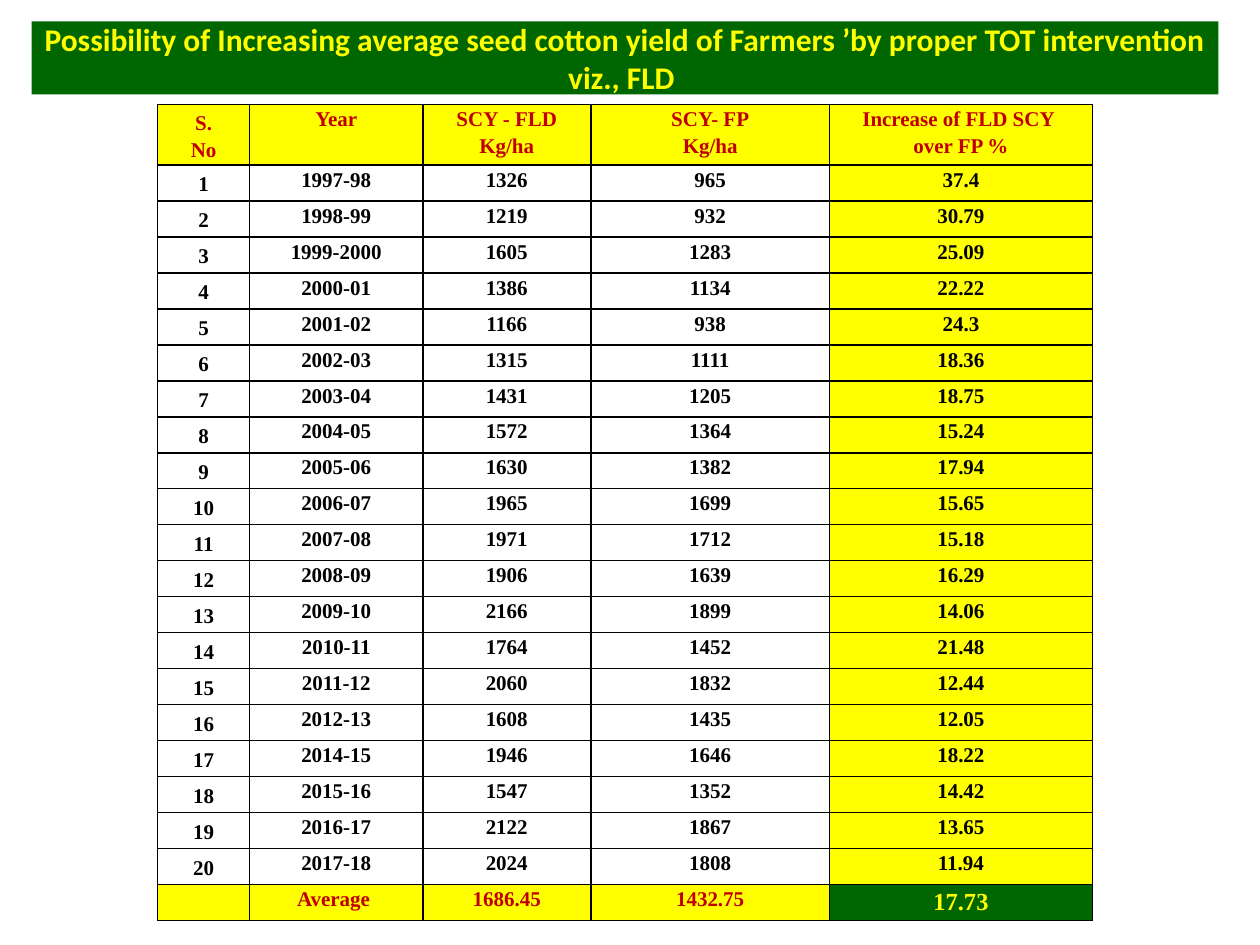
from dataclasses import dataclass

from lxml import etree
from pptx import Presentation, util as u
from pptx.dml.color import RGBColor
from pptx.enum import shapes, text
from pptx.oxml import ns


@dataclass(frozen=True)
class Theme:
    green: str = "006600"
    yellow: str = "FFFF00"
    red: str = "C00000"
    black: str = "000000"
    sans: str = "Calibri"
    serif: str = "Times New Roman"
    head: int = 18
    total: int = 14
    body: int = 12
    rule: int = 1
    lead: float = 1.15


T = Theme()
TITLE = ("Possibility of Increasing average seed cotton yield of Farmers "
         "’by proper TOT intervention viz., FLD ")
HEADS = ["S.\nNo", "Year", "SCY - FLD\nKg/ha", "SCY- FP\nKg/ha",
         "Increase of FLD SCY \nover FP %"]
YIELDS = [
    ("1997-98", "1326", "965", "37.4"),
    ("1998-99", "1219", "932", "30.79"),
    ("1999-2000", "1605", "1283", "25.09"),
    ("2000-01", "1386", "1134", "22.22"),
    ("2001-02", "1166", "938", "24.3"),
    ("2002-03", "1315", "1111", "18.36"),
    ("2003-04", "1431", "1205", "18.75"),
    ("2004-05", "1572", "1364", "15.24"),
    ("2005-06", "1630", "1382", "17.94"),
    ("2006-07", "1965", "1699", "15.65"),
    ("2007-08", "1971", "1712", "15.18"),
    ("2008-09", "1906", "1639", "16.29"),
    ("2009-10", "2166", "1899", "14.06"),
    ("2010-11", "1764", "1452", "21.48"),
    ("2011-12", "2060", "1832", "12.44"),
    ("2012-13", "1608", "1435", "12.05"),
    ("2014-15", "1946", "1646", "18.22"),
    ("2015-16", "1547", "1352", "14.42"),
    ("2016-17", "2122", "1867", "13.65"),
    ("2017-18", "2024", "1808", "11.94"),
]
MEANS = ["", "Average ", "1686.45", "1432.75", "17.73"]
WIDTHS = [0.73, 1.37, 1.33, 1.89, 2.08]
HEAD_H = 0.48


def apply(obj, vals):
    for key, val in vals.items():
        setattr(obj, key, val)


def style(par, font, size, color):
    """Centre a paragraph and format its runs."""
    par.alignment = text.PP_ALIGN.CENTER
    for run in par.runs:
        apply(run.font, {"name": font, "size": u.Pt(size), "bold": True})
        run.font.color.rgb = RGBColor.from_string(color)


def paint(fill, color):
    if color is None:
        fill.background()
    else:
        fill.solid()
        fill.fore_color.rgb = RGBColor.from_string(color)


def border(cell):
    """Rule all four sides of a cell."""
    props = cell._tc.get_or_add_tcPr()
    for side in ("lnL", "lnR", "lnT", "lnB"):
        line = etree.SubElement(props, ns.qn(f"a:{side}"), w=str(u.Pt(T.rule)))
        fill = etree.SubElement(line, ns.qn("a:solidFill"))
        etree.SubElement(fill, ns.qn("a:srgbClr"), val=T.black)


def look(row, col, last):
    """Return fill, text colour and type size for a grid position."""
    end = col == len(WIDTHS) - 1
    if row == last and end:
        return T.green, T.yellow, T.total
    if row in (0, last):
        return T.yellow, T.red, T.body
    return (T.yellow if end else None), T.black, T.body


def set_cell(cell, words, fill, color, size, anchor):
    border(cell)
    paint(cell.fill, fill)
    apply(cell, {
        "text": words, "vertical_anchor": anchor,
        "margin_left": u.Inches(0.06), "margin_right": u.Inches(0.06),
        "margin_top": 0, "margin_bottom": 0,
    })
    for par in cell.text_frame.paragraphs:
        par.line_spacing = T.lead
        style(par, T.serif, size, color)
        if not par.runs:  # keeps an empty cell as low as its row
            etree.SubElement(par._p, ns.qn("a:endParaRPr"), sz=str(size * 100))


def add_title(slide, left, top, width, height):
    bar = slide.shapes.add_shape(
        shapes.MSO_SHAPE.RECTANGLE,
        *map(u.Inches, (left, top, width, height)))
    bar.shadow.inherit = False
    paint(bar.fill, T.green)
    bar.line.fill.background()
    frame = bar.text_frame
    apply(frame, {"text": TITLE, "word_wrap": True,
                  "vertical_anchor": text.MSO_ANCHOR.MIDDLE})
    style(frame.paragraphs[0], T.sans, T.head, T.yellow)


def add_yields(slide, left, top, width, height):
    body = [(str(num), *vals) for num, vals in enumerate(YIELDS, 1)]
    data = [HEADS, *body, MEANS]
    last = len(data) - 1
    grid = slide.shapes.add_table(
        len(data), len(WIDTHS),
        *map(u.Inches, (left, top, width, height))).table
    apply(grid, {"first_row": False, "horz_banding": False})

    # Column widths share the box; body rows share what the head leaves
    for col, part in zip(grid.columns, WIDTHS):
        col.width = u.Inches(width * part / sum(WIDTHS))
    for num, row in enumerate(grid.rows):
        row.height = u.Inches((height - HEAD_H) / last if num else HEAD_H)

    for r, vals in enumerate(data):
        for c, words in enumerate(vals):
            anchor = text.MSO_ANCHOR.TOP if c else text.MSO_ANCHOR.MIDDLE
            set_cell(grid.cell(r, c), words, *look(r, c, last), anchor)


def main():
    deck = Presentation()
    apply(deck, {"slide_width": u.Inches(10), "slide_height": u.Inches(7.5)})
    slide = deck.slides.add_slide(deck.slide_layouts[6])
    add_title(slide, 0.25, 0.17, 9.42, 0.58)
    add_yields(slide, 1.25, 0.83, 7.42, 6.48)
    deck.save("out.pptx")


if __name__ == "__main__":
    main()
